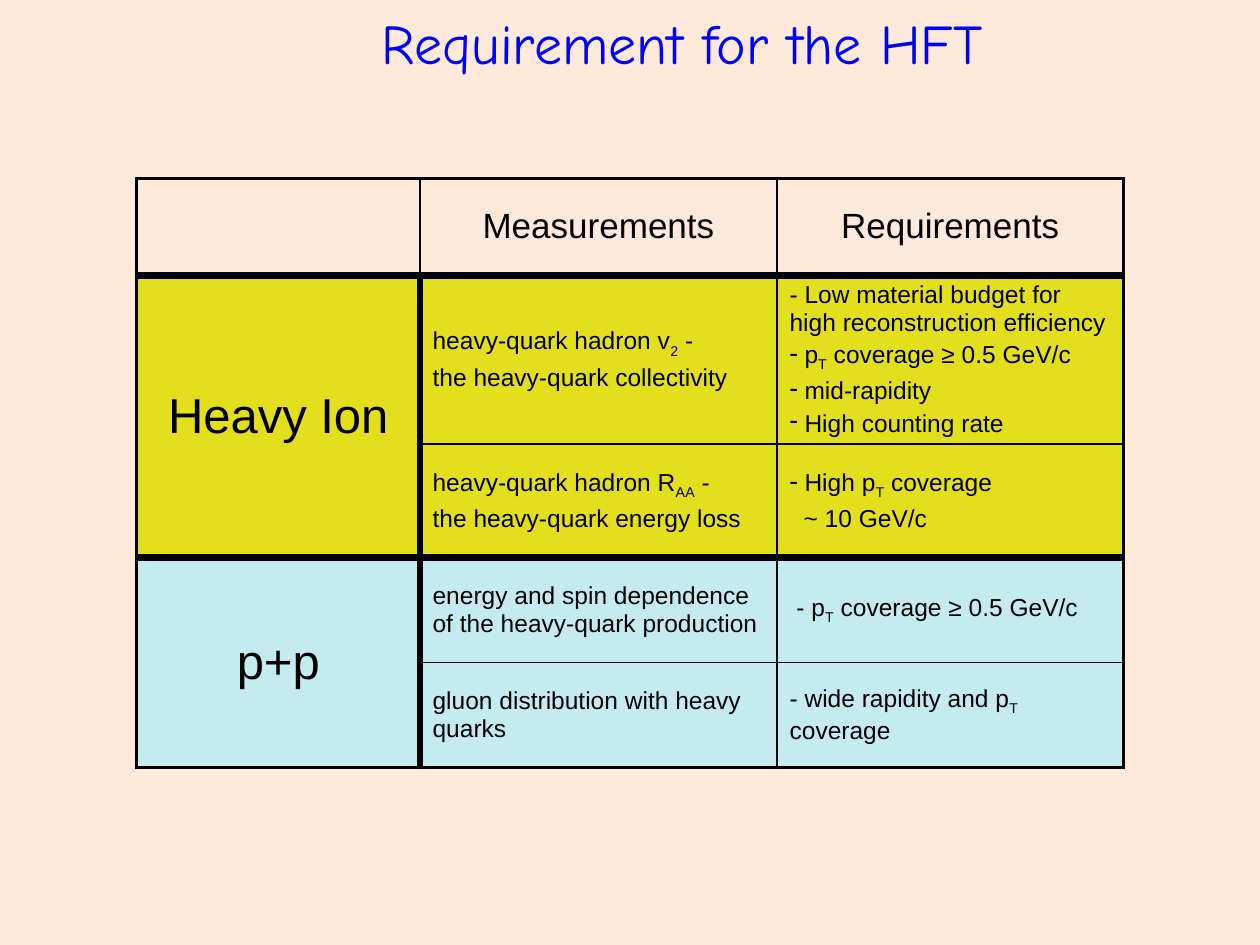
import pptx
import pptx.util
import pptx.dml.color
import pptx.enum.text
import pptx.oxml.ns
from dataclasses import dataclass
from lxml import etree

Pt = pptx.util.Pt
Align = pptx.enum.text.PP_ALIGN
Anchor = pptx.enum.text.MSO_ANCHOR

# Grid: 120 columns by 90 rows over a slide of 10 x 7.5 inches
UNIT = pptx.util.Inches(1 / 12)
WIDE, HIGH = 120, 90


@dataclass(frozen=True)
class Theme:
    back: str = "FDEADA"
    blue: str = "0000FF"
    ink: str = "000000"
    gold: str = "E3DF1C"
    aqua: str = "C4EBF0"
    font: str = "Arial"
    script: str = "Comic Neue"
    title: int = 32
    group: int = 28
    head: int = 20
    body: int = 14
    thin: float = 1
    frame: float = 2.25
    thick: float = 4.5


THEME = Theme()

# Text marks: _x_ is a subscript, a leading * a dash bullet, a leading > an indent
HEADS = ["", "Measurements", "Requirements"]
GROUPS = [
    ("Heavy Ion", THEME.gold, [
        (["heavy-quark hadron v_2_ -", "the heavy-quark collectivity"],
         ["- Low material budget for high reconstruction efficiency",
          "* p_T_ coverage ≥ 0.5 GeV/c", "* mid-rapidity", "* High counting rate"]),
        (["heavy-quark hadron R_AA_ -", "the heavy-quark energy loss"],
         ["* High p_T_ coverage", ">~ 10 GeV/c"]),
    ]),
    ("p+p", THEME.aqua, [
        (["energy and spin dependence of the heavy-quark production"],
         [" - p_T_ coverage ≥ 0.5 GeV/c"]),
        (["gluon distribution with heavy quarks"],
         ["- wide rapidity and p_T_ coverage"]),
    ]),
]
COLS = [27, 34, 33]
ROWS = [9.2, 16.1, 10.8, 10, 10]
LEVELS = [THEME.frame, THEME.thick, THEME.thin, THEME.thick, THEME.thin, THEME.frame]


def span(count):
    """Turn grid units into a length."""
    return round(count * UNIT)


def color(code):
    return pptx.dml.color.RGBColor.from_string(code)


def add_node(parent, tag, **attrs):
    return etree.SubElement(parent, pptx.oxml.ns.qn(tag), attrs)


def add_runs(para, text, size, font, ink):
    """Add text run by run; every second piece is a subscript."""
    for place, piece in enumerate(text.split("_")):
        run = para.add_run()
        run.text = piece
        run.font.size, run.font.name = Pt(size), font
        run.font.color.rgb = color(ink)
        if place % 2:
            run._r.get_or_add_rPr().set("baseline", "-25000")


def fill_cell(cell, lines, size, align, anchor=Anchor.MIDDLE):
    cell.vertical_anchor = anchor
    frame = cell.text_frame
    for place, line in enumerate(lines):
        para = frame.add_paragraph() if place else frame.paragraphs[0]
        para.alignment = align
        props = para._p.get_or_add_pPr()
        add_node(add_node(props, "a:spcBef"), "a:spcPct", val="20000")
        if line.startswith("*"):
            add_node(props, "a:buChar", char="-")
        elif line.startswith(">"):
            props.set("marL", str(Pt(8)))
        add_runs(para, line.lstrip("*>"), size, THEME.font, THEME.ink)


def edge_cell(cell, left, right, top, base):
    props = cell._tc.get_or_add_tcPr()
    for side, width in zip("LRTB", (left, right, top, base)):
        line = add_node(props, f"a:ln{side}", w=str(Pt(width)))
        add_node(add_node(line, "a:solidFill"), "a:srgbClr", val=THEME.ink)


def style_cell(cell, row, col, last, tint=None):
    """Draw the rules round a cell that ends in row last, then its fill."""
    stem = THEME.thick if row else THEME.thin
    posts = [THEME.frame, stem, THEME.thin, THEME.frame]
    edge_cell(cell, posts[col], posts[col + 1], LEVELS[row], LEVELS[last + 1])
    if tint:
        cell.fill.solid()
        cell.fill.fore_color.rgb = color(tint)
    else:
        cell.fill.background()


def add_title(slide, box):
    shape = slide.shapes.add_textbox(*map(span, box))
    frame = shape.text_frame
    frame.word_wrap = True
    frame.vertical_anchor = Anchor.MIDDLE
    para = frame.paragraphs[0]
    para.alignment = Align.CENTER
    add_runs(para, "Requirement for the HFT", THEME.title, THEME.script, THEME.blue)


def add_grid(slide, box):
    table = slide.shapes.add_table(len(ROWS), len(COLS), *map(span, box)).table
    table.first_row = table.horz_banding = False
    for col, part in zip(table.columns, COLS):
        col.width = span(box[2] * part / sum(COLS))
    for row, part in zip(table.rows, ROWS):
        row.height = span(box[3] * part / sum(ROWS))

    # Header row
    for col, text in enumerate(HEADS):
        cell = table.cell(0, col)
        style_cell(cell, 0, col, 0)
        if text:
            fill_cell(cell, [text], THEME.head, Align.CENTER)

    # Groups: a merged name cell beside its rows
    row = 1
    for name, tint, items in GROUPS:
        last = row + len(items) - 1
        lead = table.cell(row, 0)
        lead.merge(table.cell(last, 0))
        fill_cell(lead, [name], THEME.group, Align.CENTER)
        for step, pair in enumerate(items, row):
            style_cell(table.cell(step, 0), step, 0, last, tint)
            for col, lines in enumerate(pair, 1):
                cell = table.cell(step, col)
                style_cell(cell, step, col, step, tint)
                anchor = Anchor.TOP if len(lines) > 2 else Anchor.MIDDLE
                fill_cell(cell, lines, THEME.body, Align.LEFT, anchor)
        row = last + 1


def main():
    deck = pptx.Presentation()
    deck.slide_width, deck.slide_height = span(WIDE), span(HIGH)
    slide = deck.slides.add_slide(deck.slide_layouts[6])
    slide.background.fill.solid()
    slide.background.fill.fore_color.rgb = color(THEME.back)
    add_grid(slide, (13, 17, sum(COLS), sum(ROWS)))
    add_title(slide, (14, 0, 102, 8))
    deck.save("out.pptx")


if __name__ == "__main__":
    main()
